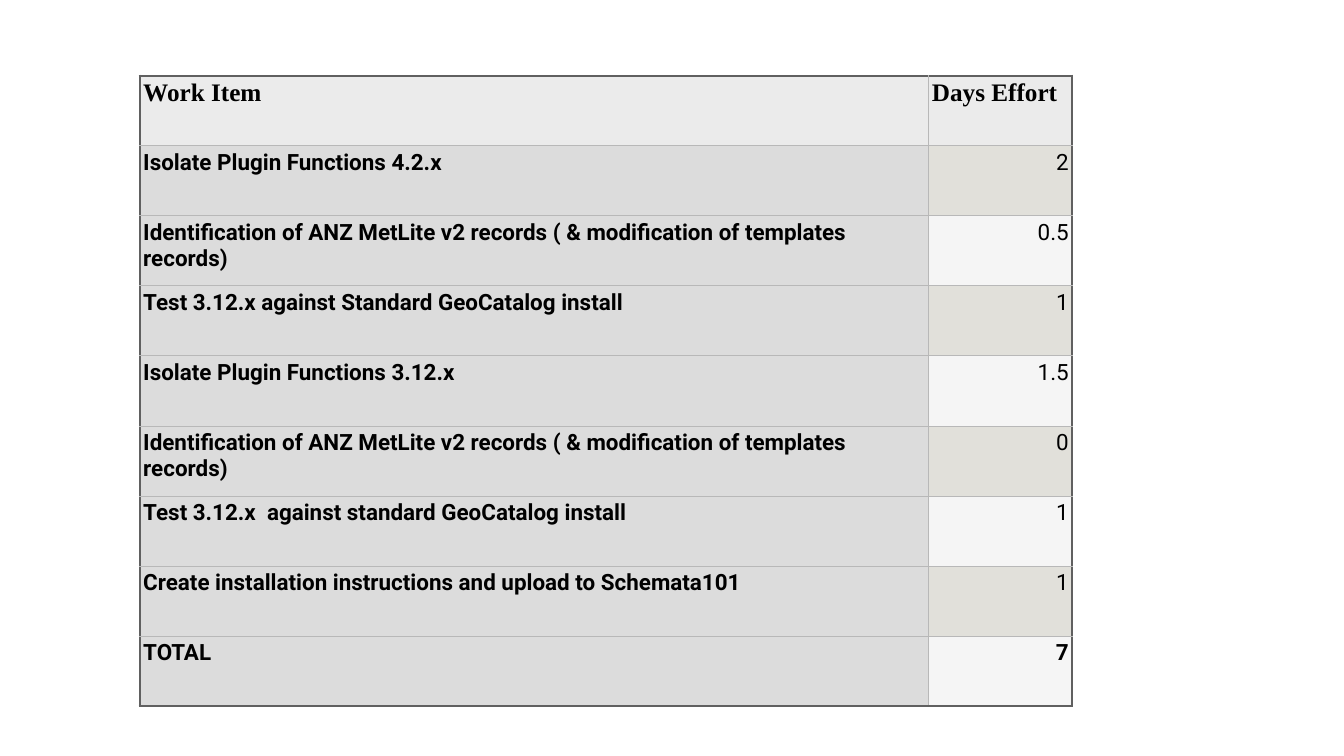
import pptx
import pptx.dml.color
import pptx.enum.text
import pptx.oxml.ns
import pptx.util
from lxml import etree

Cm = pptx.util.Cm
Pt = pptx.util.Pt
RGBColor = pptx.dml.color.RGBColor
PP_ALIGN = pptx.enum.text.PP_ALIGN

HEADER = ("Work Item", "Days Effort")
WORK_ITEMS = [
    ("Isolate Plugin Functions 4.2.x", "2"),
    ("Identification of ANZ MetLite v2 records ( & modification of templates records)", "0.5"),
    ("Test 3.12.x against Standard GeoCatalog install", "1"),
    ("Isolate Plugin Functions 3.12.x", "1.5"),
    ("Identification of ANZ MetLite v2 records ( & modification of templates records)", "0"),
    ("Test 3.12.x  against standard GeoCatalog install", "1"),
    ("Create installation instructions and upload to Schemata101", "1"),
]
TOTAL = ("TOTAL", "7")

COLUMN_WIDTHS = (Cm(39.75), Cm(7.26))
ROW_HEIGHT = Cm(3.53)
INSET = Cm(0.18)

BLACK = RGBColor(0x00, 0x00, 0x00)
HEADER_FILL = RGBColor(0xEB, 0xEB, 0xEB)
ITEM_FILL = RGBColor(0xDC, 0xDC, 0xDC)
EFFORT_FILLS = (RGBColor(0xF5, 0xF5, 0xF5), RGBColor(0xE1, 0xE0, 0xDA))
OUTER_LINE = (RGBColor(0x60, 0x60, 0x60), Pt(3))
INNER_LINE = (RGBColor(0xB8, 0xB8, 0xB8), Pt(1))


def add_border(cell, side, color, width):
    properties = cell._tc.get_or_add_tcPr()
    line = etree.SubElement(properties, pptx.oxml.ns.qn(f"a:ln{side}"), w=str(int(width)))
    fill = etree.SubElement(line, pptx.oxml.ns.qn("a:solidFill"))
    etree.SubElement(fill, pptx.oxml.ns.qn("a:srgbClr"), val=str(color))


def write_cell(cell, text, font_name, size, bold, alignment):
    cell.margin_left = cell.margin_right = INSET
    cell.margin_top = cell.margin_bottom = INSET
    paragraph = cell.text_frame.paragraphs[0]
    paragraph.alignment = alignment
    paragraph.space_before = Pt(59)
    run = paragraph.add_run()
    run.text = text
    run.font.name = font_name
    run.font.size = size
    run.font.bold = bold
    run.font.color.rgb = BLACK


def main():
    presentation = pptx.Presentation()
    presentation.slide_width = Cm(67.74)
    presentation.slide_height = Cm(38.1)
    slide = presentation.slides.add_slide(presentation.slide_layouts[6])

    rows = [HEADER, *WORK_ITEMS, TOTAL]
    last_row = len(rows) - 1
    table = slide.shapes.add_table(
        len(rows), len(COLUMN_WIDTHS), Cm(7.04), Cm(3.81),
        sum(COLUMN_WIDTHS), ROW_HEIGHT * len(rows),
    ).table
    for column, width in zip(table.columns, COLUMN_WIDTHS):
        column.width = width

    for row_index, row in enumerate(rows):
        table.rows[row_index].height = ROW_HEIGHT
        is_header = row_index == 0
        for column_index, text in enumerate(row):
            cell = table.cell(row_index, column_index)
            is_effort = column_index == 1
            outer_sides = {
                "L": not is_effort,
                "R": is_effort,
                "T": is_header,
                "B": row_index == last_row,
            }
            for side, is_outer in outer_sides.items():
                add_border(cell, side, *(OUTER_LINE if is_outer else INNER_LINE))

            if is_header:
                fill_color = HEADER_FILL
            elif is_effort:
                fill_color = EFFORT_FILLS[row_index % 2]
            else:
                fill_color = ITEM_FILL
            cell.fill.solid()
            cell.fill.fore_color.rgb = fill_color

            write_cell(
                cell, text,
                "Times New Roman" if is_header else "Roboto",
                Pt(36) if is_header else Pt(32),
                is_header or not is_effort or row_index == last_row,
                PP_ALIGN.RIGHT if is_effort and not is_header else PP_ALIGN.LEFT,
            )

    presentation.save("out.pptx")


if __name__ == "__main__":
    main()
